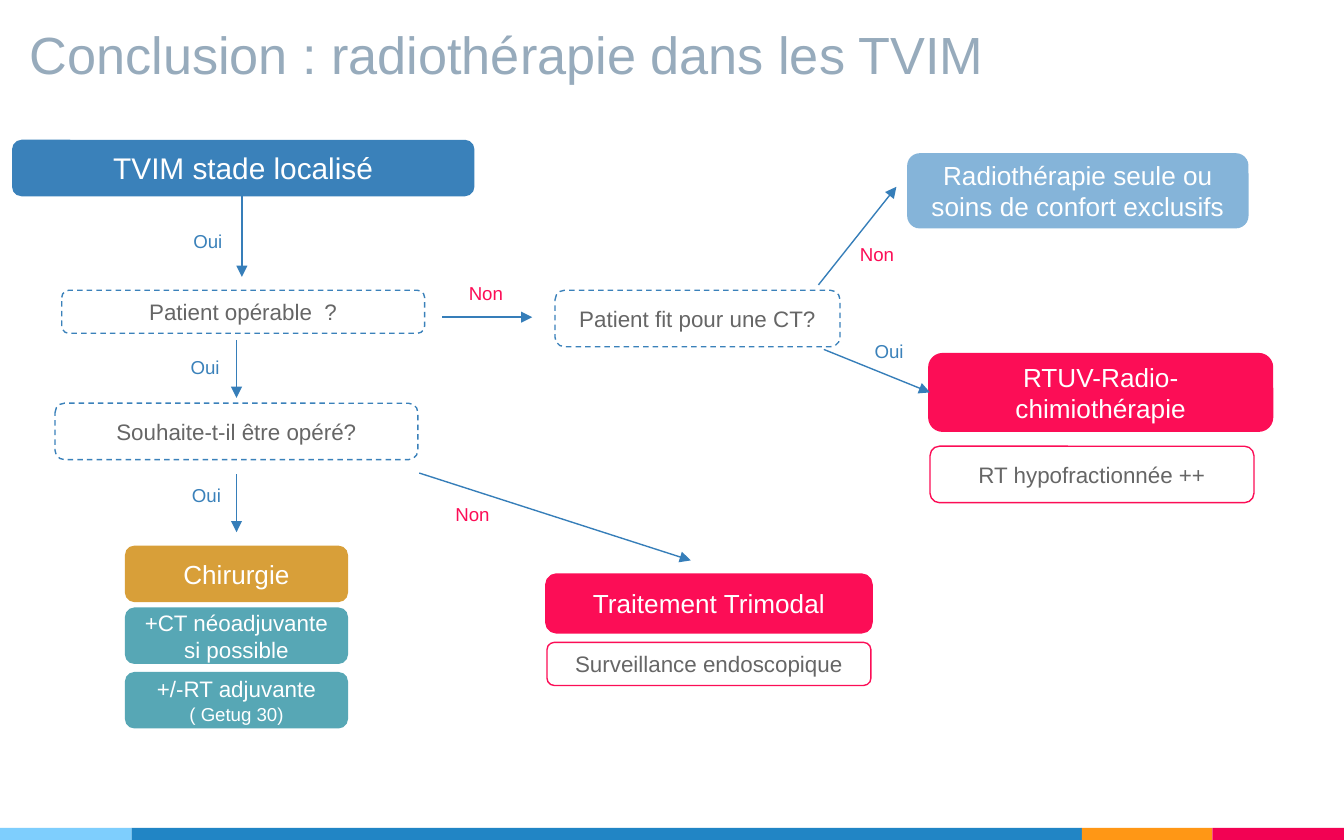
"""Build the decision tree slide on radiotherapy in TVIM."""
from lxml.etree import SubElement
from pptx import Presentation
from pptx.dml.color import RGBColor
from pptx.enum.dml import MSO_LINE_DASH_STYLE as Dash
from pptx.enum.shapes import MSO_CONNECTOR as Connector, MSO_SHAPE as Shape
from pptx.enum.text import MSO_ANCHOR as Anchor, MSO_AUTO_SIZE as AutoSize, PP_ALIGN as Align
from pptx.oxml.ns import qn
from pptx.util import Inches, Pt

COLORS = {
    "title": "97ABBC", "white": "FFFFFF", "gray": "666666", "blue": "3A81BA",
    "arrow": "367EB9", "pale": "85B4D9", "pink": "FC0D56", "gold": "D89F39",
    "teal": "57A7B5", "sky": "7ECEFD", "ocean": "2185C5", "orange": "FF9715",
    "crimson": "F20253",
}
TITLE = "Conclusion : radiothérapie dans les TVIM"
BANDS = [("sky", 0.98), ("ocean", 7.07), ("orange", 0.97), ("crimson", 0.98)]
STYLES = {
    "start": {"fill": "blue", "text": "white"},
    "question": {"line": "blue", "width": 0.75, "dash": Dash.DASH, "text": "gray"},
    "treatment": {"fill": "pink", "line": "pink", "width": 2, "text": "white"},
    "detail": {"line": "pink", "width": 0.75, "text": "gray"},
    "surgery": {"fill": "gold", "text": "white"},
    "option": {"fill": "teal", "text": "white"},
    "comfort": {"fill": "pale", "text": "white"},
}
NODES = [
    ("start", (0.09, 1.04, 3.44, 0.42), [("TVIM stade localisé", 16)]),
    ("question", (0.46, 2.16, 2.7, 0.32), [("Patient opérable  ?", 12)]),
    ("question", (0.41, 3, 2.7, 0.42), [("Souhaite-t-il être opéré?", 12)]),
    ("question", (4.13, 2.16, 2.12, 0.42), [("Patient fit pour une CT?", 12)]),
    ("surgery", (0.93, 4.06, 1.66, 0.42), [("Chirurgie", 14)]),
    ("option", (0.93, 4.52, 1.66, 0.42), [("+CT néoadjuvante si possible", 12)]),
    ("option", (0.93, 5, 1.66, 0.42), [("+/-RT adjuvante", 12), ("( Getug 30)", 10)]),
    ("treatment", (4.07, 4.28, 2.41, 0.42), [("Traitement Trimodal", 14)]),
    ("detail", (4.07, 4.78, 2.41, 0.32), [("Surveillance endoscopique", 12)]),
    ("comfort", (6.75, 1.14, 2.54, 0.56),
     [("Radiothérapie seule ou soins de confort exclusifs", 14)]),
    ("treatment", (6.92, 2.64, 2.54, 0.56), [("RTUV-Radio-chimiothérapie", 14)]),
    ("detail", (6.92, 3.32, 2.41, 0.42), [("RT hypofractionnée ++", 12)]),
]
ARROWS = [
    (1.8, 1.46, 1.8, 2.06), (1.76, 2.53, 1.76, 2.96), (1.76, 3.53, 1.76, 3.96),
    (3.12, 3.52, 5.14, 4.17), (3.29, 2.36, 3.96, 2.36),
    (6.09, 2.12, 6.67, 1.39), (6.13, 2.6, 6.92, 2.92),
]
ANSWERS = {
    "Oui": ("blue", 0.42, [(1.34, 1.66), (1.32, 2.6), (1.33, 3.55), (6.41, 2.48)]),
    "Non": ("pink", 0.46, [(3.39, 2.05), (6.3, 1.76), (3.29, 3.69)]),
}


def color(name):
    return RGBColor.from_string(COLORS[name])


def place(values):
    return [Inches(value) for value in values]


def set_all(target, values):
    for name, value in values.items():
        setattr(target, name, value)


def write(frame, lines, ink, align, **frame_values):
    set_all(frame, frame_values)
    for index, (words, size) in enumerate(lines):
        para = frame.add_paragraph() if index else frame.paragraphs[0]
        para.alignment = align
        span = para.add_run()
        span.text = words
        set_all(span.font, {"name": "Arial", "size": Pt(size)})
        span.font.color.rgb = color(ink)


def add_box(page, kind, bounds, fill=None, line=None, width=0.75, dash=None):
    box = page.shapes.add_shape(kind, *place(bounds))
    box.shadow.inherit = False
    if fill:
        box.fill.solid()
        box.fill.fore_color.rgb = color(fill)
    else:
        box.fill.background()
    if line:
        box.line.color.rgb = color(line)
        set_all(box.line, {"width": Pt(width), "dash_style": dash})
    else:
        box.line.fill.background()
    return box


def add_arrow(page, ends):
    arrow = page.shapes.add_connector(Connector.STRAIGHT, *place(ends))
    arrow.line.color.rgb = color("arrow")
    arrow.line.width = Pt(0.75)
    SubElement(arrow.line._get_or_add_ln(), qn("a:tailEnd"), type="triangle")
    SubElement(arrow._element.spPr, qn("a:effectLst"))


def main():
    deck = Presentation()
    set_all(deck, {"slide_width": Inches(10), "slide_height": Inches(6.25)})
    page = deck.slides.add_slide(deck.slide_layouts[5])

    title = page.shapes.title
    bounds = place((0.12, -0.06, 9.35, 0.79))
    set_all(title, dict(zip(("left", "top", "width", "height"), bounds)))
    margins = dict.fromkeys(
        ("margin_left", "margin_top", "margin_right", "margin_bottom"), Inches(0.1))
    write(title.text_frame, [(TITLE, 28)], "title", Align.LEFT, word_wrap=True,
          auto_size=AutoSize.NONE, vertical_anchor=Anchor.BOTTOM, **margins)

    left = 0
    for fill, width in BANDS:
        add_box(page, Shape.RECTANGLE, (left, 6.16, width, 0.09), fill)
        left += width

    for style, bounds, lines in NODES:
        look = dict(STYLES[style])
        ink = look.pop("text")
        box = add_box(page, Shape.ROUNDED_RECTANGLE, bounds, **look)
        write(box.text_frame, lines, ink, Align.CENTER,
              word_wrap=True, vertical_anchor=Anchor.MIDDLE)

    for ends in ARROWS:
        add_arrow(page, ends)

    for answer, (ink, width, spots) in ANSWERS.items():
        for spot in spots:
            box = page.shapes.add_textbox(*place((*spot, width, 0.27)))
            write(box.text_frame, [(answer, 10)], ink, Align.LEFT,
                  word_wrap=False, auto_size=AutoSize.SHAPE_TO_FIT_TEXT)

    deck.save("out.pptx")


if __name__ == "__main__":
    main()
